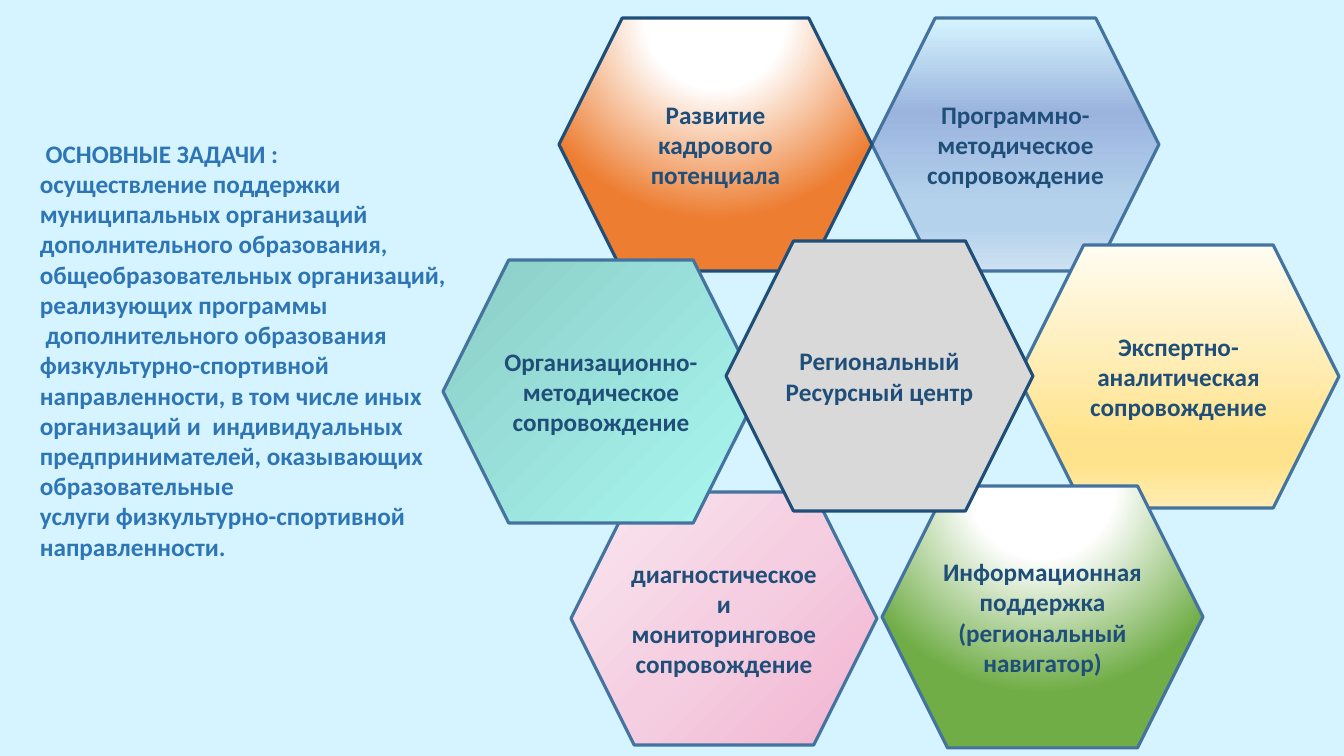
from pptx import Presentation
from pptx.dml.color import RGBColor
from pptx.enum.shapes import MSO_SHAPE
from pptx.enum.text import MSO_ANCHOR, MSO_AUTO_SIZE, PP_ALIGN
from pptx.oxml import parse_xml
from pptx.oxml.ns import nsdecls
from pptx.util import Emu, Pt

HEXAGON = MSO_SHAPE.HEXAGON
MIDDLE = MSO_ANCHOR.MIDDLE
FIT_SHAPE = MSO_AUTO_SIZE.SHAPE_TO_FIT_TEXT
CENTER, LEFT = PP_ALIGN.CENTER, PP_ALIGN.LEFT

EMU_PER_PX = 914400 / 100.8
BLANK_LAYOUT = 6

COLORS = {
    "background": "D5F4FF",
    "navy": "1F4E79",
    "outline": "43739E",
    "tasks": "2E75B6",
    "center": "D9D9D9",
}

DOWN = '<a:lin ang="5400000" scaled="0"/>'


def focus(left, top, right, bottom):
    return (
        '<a:path path="circle"><a:fillToRect '
        f'l="{left * 1000}" t="{top * 1000}" r="{right * 1000}" b="{bottom * 1000}"/></a:path>'
    )


ABOVE = focus(50, -80, 50, 180)

GRADIENTS = {
    "blue": (DOWN, {0: "D5F4FF", 37: "9AB4DE", 74: "B5D2EC", 83: "B5D2EC", 100: "CEE1F2"}),
    "yellow": (DOWN, {0: "FFFCF2", 74: "FFE38C", 83: "FFE38C", 100: "FFECB2"}),
    "orange": (ABOVE, {0: "FFFFFF", 35: "FFFFFF", 100: "ED7D31"}),
    "pink": (focus(100, 100, 0, 0), {0: "F1B3D1", 50: "F5CFE1", 100: "FAE7F0"}),
    "green": (ABOVE, {0: "FFFFFF", 35: "FFFFFF", 100: "70AD47"}),
    "teal": (focus(0, 0, 100, 100), {0: "65938F", 10: "8FD1CB", 100: "AAF8F1"}),
}

DIRECTIONS = [
    ((872, 18, 287, 253), "blue", "outline", ["Программно-методическое сопровождение"]),
    ((1018, 245, 321, 263), "yellow", "outline", ["Экспертно-аналитическая сопровождение"]),
    ((559, 18, 313, 253), "orange", "navy", ["Развитие кадрового потенциала"]),
    ((571, 492, 306, 253), "pink", "outline", ["диагностическое и мониторинговое сопровождение"]),
    ((882, 486, 321, 262), "green", "outline",
     ["Информационная", "поддержка", "(региональный навигатор)"]),
    ((443, 260, 316, 263), "teal", "outline", ["Организационно-методическое", "сопровождение"]),
    ((726, 241, 307, 270), "center", "navy", ["Региональный Ресурсный центр"]),
]

TASKS = [
    " ОСНОВНЫЕ ЗАДАЧИ :",
    "осуществление поддержки",
    "муниципальных организаций дополнительного образования, "
    "общеобразовательных организаций, реализующих программы",
    " дополнительного образования физкультурно-спортивной направленности, в том числе иных",
    "организаций и  индивидуальных предпринимателей, оказывающих образовательные",
    "услуги физкультурно-спортивной направленности.",
]


def color(name):
    return RGBColor.from_string(COLORS[name])


def px(*lengths):
    return [Emu(round(length * EMU_PER_PX)) for length in lengths]


class SlideBuilder:
    font_format = {"name": "Calibri", "size": Pt(18), "bold": True}
    outline_width = Pt(2.25)

    def __init__(self, slide):
        self.slide = slide

    def background(self, name):
        fill = self.slide.background.fill
        fill.solid()
        fill.fore_color.rgb = color(name)

    def fill_text(self, frame, paragraphs, text_color, alignment):
        frame.word_wrap = True
        frame.text = "\n".join(paragraphs)
        for paragraph in frame.paragraphs:
            paragraph.alignment = alignment
            font = paragraph.runs[0].font
            for attribute, value in self.font_format.items():
                setattr(font, attribute, value)
            font.color.rgb = color(text_color)

    def gradient(self, shape, name):
        direction, stops = GRADIENTS[name]
        stop_list = "".join(
            f'<a:gs pos="{position * 1000}"><a:srgbClr val="{value}"/></a:gs>'
            for position, value in stops.items()
        )
        geometry = shape.element.spPr.find("{*}prstGeom")
        geometry.addnext(parse_xml(
            f'<a:gradFill {nsdecls("a")} rotWithShape="1">'
            f"<a:gsLst>{stop_list}</a:gsLst>{direction}</a:gradFill>"
        ))

    def hexagon(self, box, fill, outline, paragraphs):
        cell = self.slide.shapes.add_shape(HEXAGON, *px(*box))
        cell.shadow.inherit = False
        if fill in GRADIENTS:
            self.gradient(cell, fill)
        else:
            cell.fill.solid()
            cell.fill.fore_color.rgb = color(fill)
        cell.line.color.rgb = color(outline)
        cell.line.width = self.outline_width
        cell.text_frame.vertical_anchor = MIDDLE
        self.fill_text(cell.text_frame, paragraphs, "navy", CENTER)

    def text(self, box, paragraphs, text_color):
        frame = self.slide.shapes.add_textbox(*px(*box)).text_frame
        self.fill_text(frame, paragraphs, text_color, LEFT)
        frame.auto_size = FIT_SHAPE


def main():
    presentation = Presentation()
    presentation.slide_width, presentation.slide_height = px(1344, 756)
    layout = presentation.slide_layouts[BLANK_LAYOUT]
    builder = SlideBuilder(presentation.slides.add_slide(layout))
    builder.background("background")
    for direction in DIRECTIONS:
        builder.hexagon(*direction)
    builder.text((30, 133, 442, 437), TASKS, "tasks")
    presentation.save("out.pptx")


if __name__ == "__main__":
    main()
